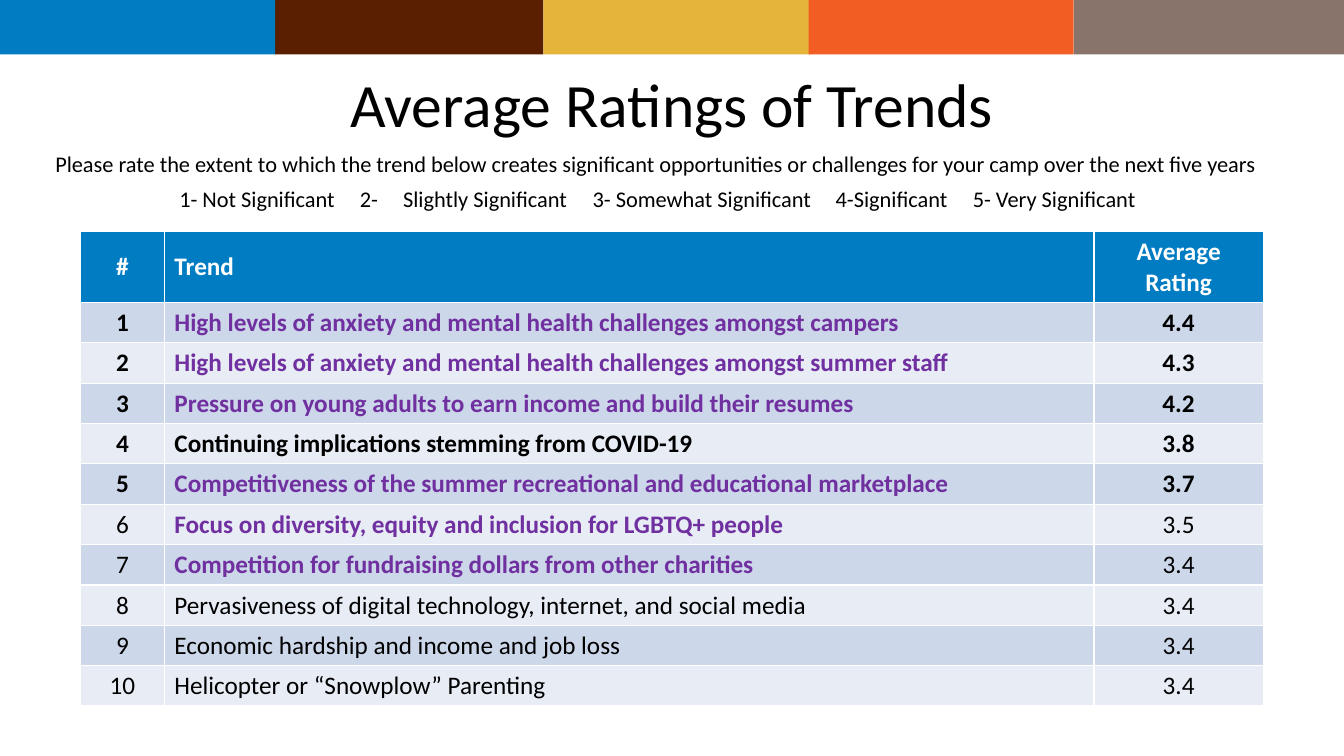
from dataclasses import dataclass

from lxml.etree import SubElement
from pptx import Presentation
from pptx.dml.color import RGBColor
from pptx.enum.text import MSO_ANCHOR, PP_ALIGN
from pptx.oxml.ns import qn
from pptx.slide import Slide
from pptx.table import _Cell
from pptx.text.text import _Paragraph
from pptx.util import Inches, Pt

FONT = "Calibri"
COLORS = {
    "blue": "007CC2", "brown": "591F00", "gold": "E5B53B",
    "orange": "F15D22", "taupe": "88746A", "header": "007CC3",
    "odd_row": "CCD7E9", "even_row": "E7ECF5",
    "purple": "7030A0", "black": "000000", "white": "FFFFFF",
}


@dataclass
class Band:
    left: float
    width: float
    color: str


@dataclass
class Caption:
    text: str
    left: float
    top: float
    width: float
    height: float
    size: int = 16
    align: PP_ALIGN = PP_ALIGN.LEFT
    anchor: MSO_ANCHOR = MSO_ANCHOR.TOP
    line_spacing: float = 1.0
    tab_stops: tuple[float, ...] = ()


@dataclass
class Trend:
    name: str
    rating: str
    color: str = "black"
    bold: bool = False


BANDS = [
    Band(2.73, 2.66, "brown"),
    Band(0, 2.73, "blue"),
    Band(5.39, 2.66, "gold"),
    Band(8.02, 2.63, "orange"),
    Band(10.65, 2.68, "taupe"),
]
CAPTIONS = [
    Caption("Average Ratings of Trends", 1.33, 0.5, 10.67, 1.13, 44,
            PP_ALIGN.CENTER, MSO_ANCHOR.MIDDLE, 0.9),
    Caption("Please rate the extent to which the trend below creates significant "
            "opportunities or challenges for your camp over the next five years",
            0.45, 1.44, 12.43, 0.37),
    Caption("1- Not Significant\t2-\tSlightly Significant\t3- Somewhat Significant"
            "\t4-Significant\t5- Very Significant",
            1.68, 1.79, 9.97, 0.37, tab_stops=(1.79, 2.22, 4.1, 6.51, 7.87)),
]
TRENDS = [
    Trend("High levels of anxiety and mental health challenges amongst campers",
          "4.4", "purple", True),
    Trend("High levels of anxiety and mental health challenges amongst summer staff",
          "4.3", "purple", True),
    Trend("Pressure on young adults to earn income and build their resumes",
          "4.2", "purple", True),
    Trend("Continuing implications stemming from COVID-19", "3.8", bold=True),
    Trend("Competitiveness of the summer recreational and educational marketplace",
          "3.7", "purple", True),
    Trend("Focus on diversity, equity and inclusion for LGBTQ+ people",
          "3.5", "purple", True),
    Trend("Competition for fundraising dollars from other charities",
          "3.4", "purple", True),
    Trend("Pervasiveness of digital technology, internet, and social media", "3.4"),
    Trend("Economic hardship and income and job loss", "3.4"),
    Trend("Helicopter or “Snowplow” Parenting", "3.4"),
]
TOP_RANKS = 5  # ranks whose number and rating are bold
COLUMN_WIDTHS = (0.83, 9.22, 1.68)
HEADER_HEIGHT, ROW_HEIGHT = 0.67, 0.39


def rgb(name: str) -> RGBColor:
    return RGBColor.from_string(COLORS[name])


def format_runs(paragraph: _Paragraph, size: int, color: str, bold: bool = False) -> None:
    for run in paragraph.runs:
        run.font.name = FONT
        run.font.size = Pt(size)
        run.font.bold = bold
        run.font.color.rgb = rgb(color)


def draw_band(slide: Slide, band: Band) -> None:
    stripe = slide.shapes.add_shape(1, Inches(band.left), 0, Inches(band.width), Inches(0.54))
    stripe.shadow.inherit = False
    stripe.fill.solid()
    stripe.fill.fore_color.rgb = rgb(band.color)
    stripe.line.fill.background()


def draw_caption(slide: Slide, caption: Caption) -> None:
    box = slide.shapes.add_textbox(Inches(caption.left), Inches(caption.top),
                                   Inches(caption.width), Inches(caption.height))
    frame = box.text_frame
    frame.word_wrap = True
    frame.vertical_anchor = caption.anchor
    frame.text = caption.text
    paragraph = frame.paragraphs[0]
    paragraph.alignment = caption.align
    paragraph.line_spacing = caption.line_spacing
    format_runs(paragraph, caption.size, "black")
    if caption.tab_stops:
        stops = SubElement(paragraph._p.get_or_add_pPr(), qn("a:tabLst"))
        for stop in caption.tab_stops:
            SubElement(stops, qn("a:tab"), pos=str(Inches(stop)), algn="l")


def fill_cell(cell: _Cell, text: str, fill: str, color: str, bold: bool,
              align: PP_ALIGN) -> None:
    cell.fill.solid()
    cell.fill.fore_color.rgb = rgb(fill)
    cell.text_frame.text = text
    paragraph = cell.text_frame.paragraphs[0]
    paragraph.alignment = align
    format_runs(paragraph, 18, color, bold)


def draw_ratings(slide: Slide) -> None:
    ratings = slide.shapes.add_table(
        len(TRENDS) + 1, len(COLUMN_WIDTHS), Inches(0.8), Inches(2.3),
        Inches(sum(COLUMN_WIDTHS)), Inches(HEADER_HEIGHT + ROW_HEIGHT * len(TRENDS))).table
    for column, width in zip(ratings.columns, COLUMN_WIDTHS):
        column.width = Inches(width)
    for row in ratings.rows:
        row.height = Inches(ROW_HEIGHT)
    ratings.rows[0].height = Inches(HEADER_HEIGHT)
    aligns = (PP_ALIGN.CENTER, PP_ALIGN.LEFT, PP_ALIGN.CENTER)

    # Header row
    for column, heading in enumerate(("#", "Trend", "Average Rating")):
        cell = ratings.cell(0, column)
        fill_cell(cell, heading, "header", "white", True, aligns[column])
        if column < 2:
            cell.vertical_anchor = MSO_ANCHOR.MIDDLE

    # Ranked trends
    for rank, trend in enumerate(TRENDS, start=1):
        fill = "odd_row" if rank % 2 else "even_row"
        top = rank <= TOP_RANKS
        entries = ((str(rank), "black", top), (trend.name, trend.color, trend.bold),
                   (trend.rating, "black", top))
        for column, (text, color, bold) in enumerate(entries):
            fill_cell(ratings.cell(rank, column), text, fill, color, bold, aligns[column])


def main() -> None:
    deck = Presentation()
    deck.slide_width, deck.slide_height = Inches(13.33), Inches(7.5)
    slide = deck.slides.add_slide(deck.slide_layouts[6])
    for band in BANDS:
        draw_band(slide, band)
    title, *instructions = CAPTIONS
    draw_caption(slide, title)
    draw_ratings(slide)
    for instruction in instructions:
        draw_caption(slide, instruction)
    deck.save("out.pptx")


if __name__ == "__main__":
    main()
